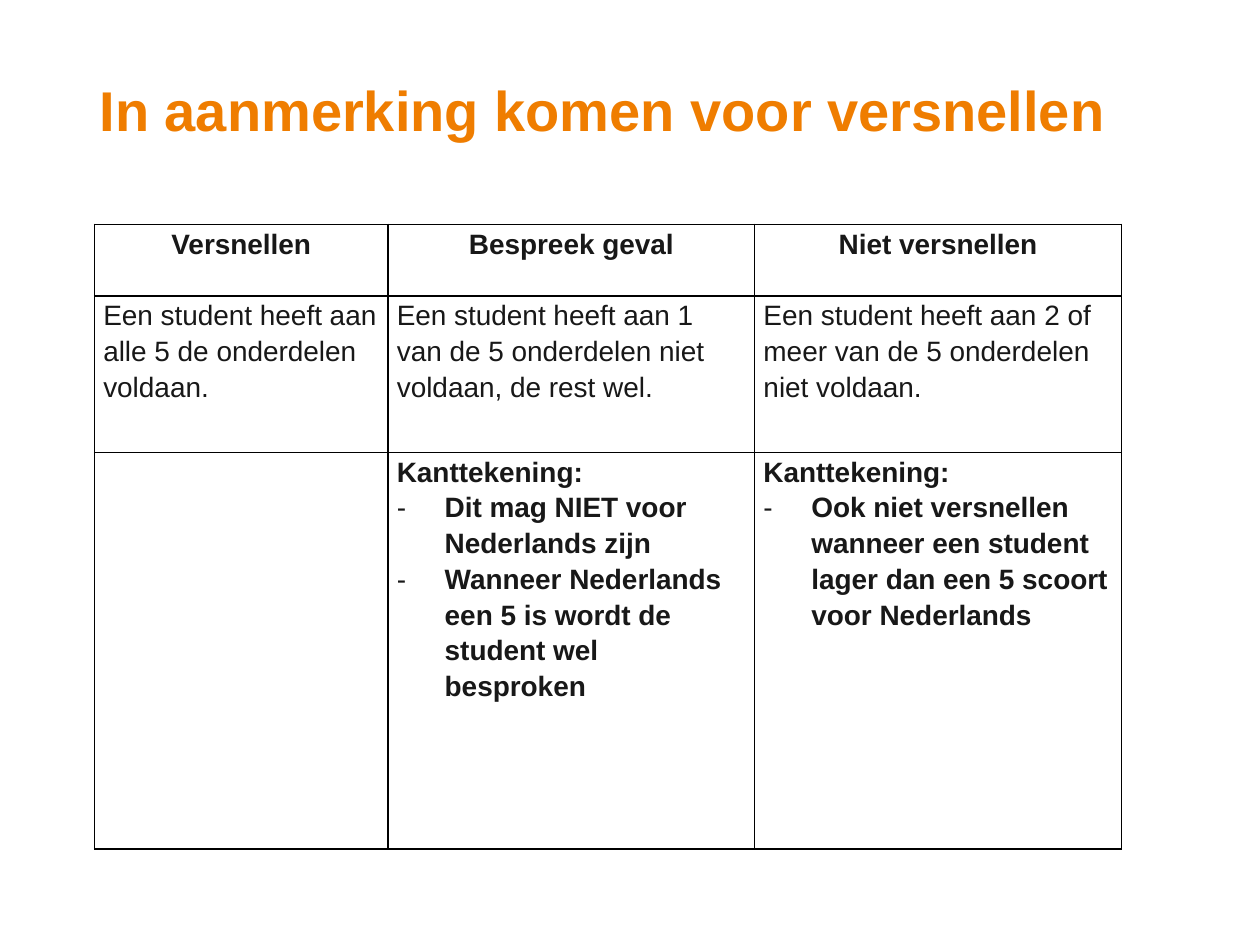
from dataclasses import dataclass

from lxml import etree
from pptx import Presentation
from pptx import util as u
from pptx.dml.color import RGBColor
from pptx.enum import text
from pptx.oxml import ns


@dataclass(frozen=True)
class Theme:
    font: str = "Arial"
    orange: str = "EF7D00"
    ink: str = "181818"
    rule: str = "000000"
    head: int = 32
    body: int = 16


T = Theme()
WIDE, HIGH = 10, 7.5
COLS = (2.33, 2.91, 2.91)
ROWS = (0.57, 1.24, 3.15)
INDENT = 0.38

TITLE = "In aanmerking komen voor versnellen"
HEADS = ("Versnellen", "Bespreek geval", "Niet versnellen")
RULES = (
    "Een student heeft aan alle 5 de onderdelen voldaan.",
    "Een student heeft aan 1 van de 5 onderdelen niet voldaan, de rest wel.",
    "Een student heeft aan 2 of meer van de 5 onderdelen niet voldaan.",
)
LABEL = "Kanttekening:"
NOTES = (
    (),
    ("Dit mag NIET voor Nederlands zijn",
     "Wanneer Nederlands een 5 is wordt de student wel besproken"),
    ("Ook niet versnellen wanneer een student lager dan een 5 scoort "
     "voor Nederlands",),
)


def style(para, size, color, bold, space):
    para.line_spacing = space
    font = para.font
    font.name, font.size, font.bold = T.font, u.Pt(size), bold
    font.color.rgb = RGBColor.from_string(color)


def dash(para):
    """Give a paragraph a hanging dash."""
    props = para._p.get_or_add_pPr()
    props.set("marL", str(u.Inches(INDENT)))
    props.set("indent", str(-u.Inches(INDENT)))
    etree.SubElement(props, ns.qn("a:buFont"), typeface=T.font)
    etree.SubElement(props, ns.qn("a:buChar"), char="-")


def border(cell):
    """Rule all four sides; lines come before the fill in the XML."""
    props = cell._tc.get_or_add_tcPr()
    for spot, side in enumerate("LRTB"):
        line = etree.Element(ns.qn(f"a:ln{side}"), w=str(u.Pt(1)))
        fill = etree.SubElement(line, ns.qn("a:solidFill"))
        etree.SubElement(fill, ns.qn("a:srgbClr"), val=T.rule)
        props.insert(spot, line)


def write(cell, lines, bold=False, center=False):
    """Fill a cell: the first line is plain, later ones get a dash."""
    cell.margin_left = cell.margin_right = u.Inches(0.07)
    cell.margin_top = cell.margin_bottom = 0
    cell.fill.background()
    border(cell)
    frame = cell.text_frame
    frame.text = "\n".join(lines)
    for spot, para in enumerate(frame.paragraphs):
        if spot:
            dash(para)
        if center:
            para.alignment = text.PP_ALIGN.CENTER
        style(para, T.body, T.ink, bold, 1.15)


def add_title(slide):
    title = slide.shapes.title
    title.left, title.top = u.Inches(0.69), u.Inches(0.4)
    title.width, title.height = u.Inches(8.62), u.Inches(1.45)
    frame = title.text_frame
    frame.text = TITLE
    frame.word_wrap = True
    frame.auto_size = text.MSO_AUTO_SIZE.NONE
    frame.vertical_anchor = text.MSO_ANCHOR.MIDDLE
    frame.margin_bottom = u.Inches(0.5)  # lifts the line above the middle
    para = frame.paragraphs[0]
    para.alignment = text.PP_ALIGN.LEFT
    style(para, T.head, T.orange, True, 0.9)


def add_grid(slide):
    table = slide.shapes.add_table(
        len(ROWS), len(COLS), u.Inches(0.75), u.Inches(1.78),
        u.Inches(sum(COLS)), u.Inches(sum(ROWS))).table
    table.first_row = table.horz_banding = False
    for col, size in zip(table.columns, COLS):
        col.width = u.Inches(size)
    for row, size in zip(table.rows, ROWS):
        row.height = u.Inches(size)
    for col, (head, rule, notes) in enumerate(zip(HEADS, RULES, NOTES)):
        write(table.cell(0, col), [head], bold=True, center=True)
        write(table.cell(1, col), [rule])
        write(table.cell(2, col), [LABEL, *notes] if notes else [], bold=True)


def main():
    deck = Presentation()
    deck.slide_width, deck.slide_height = u.Inches(WIDE), u.Inches(HIGH)
    slide = deck.slides.add_slide(deck.slide_layouts[5])  # title only
    add_title(slide)
    add_grid(slide)
    deck.save("out.pptx")


if __name__ == "__main__":
    main()
